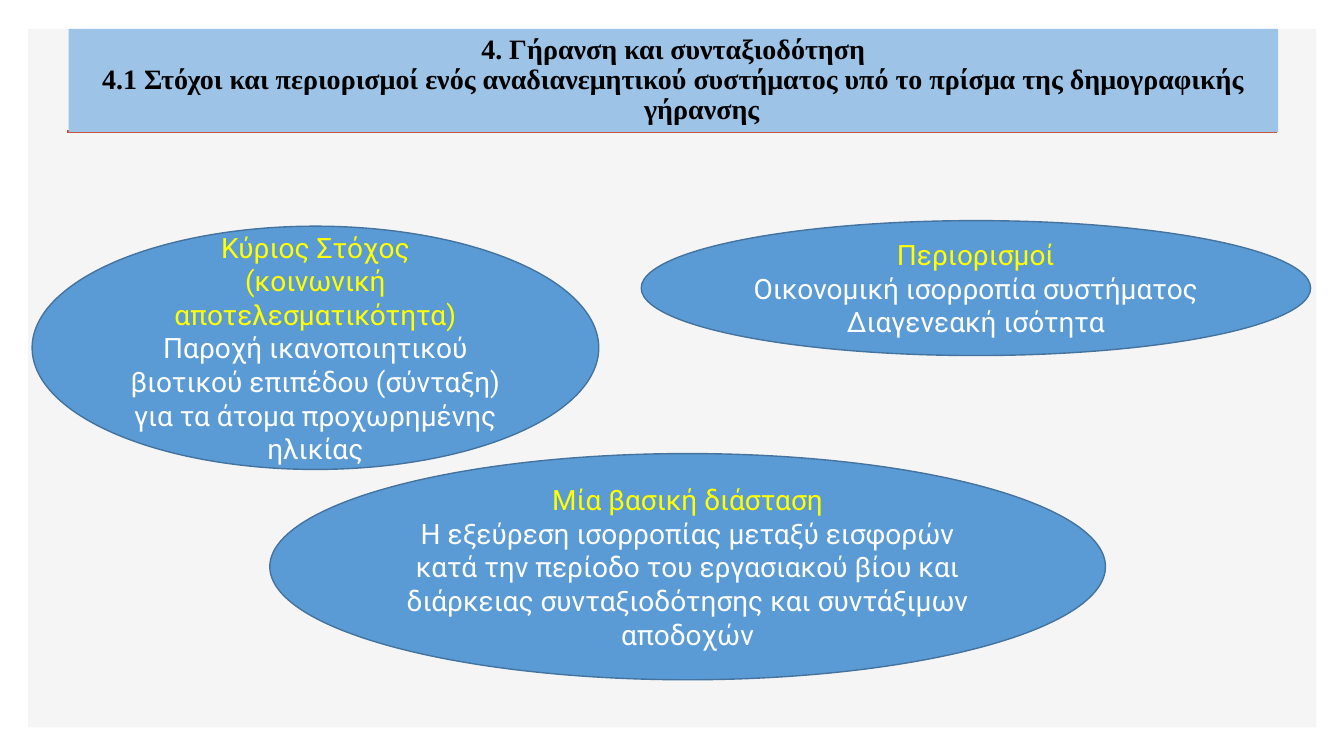
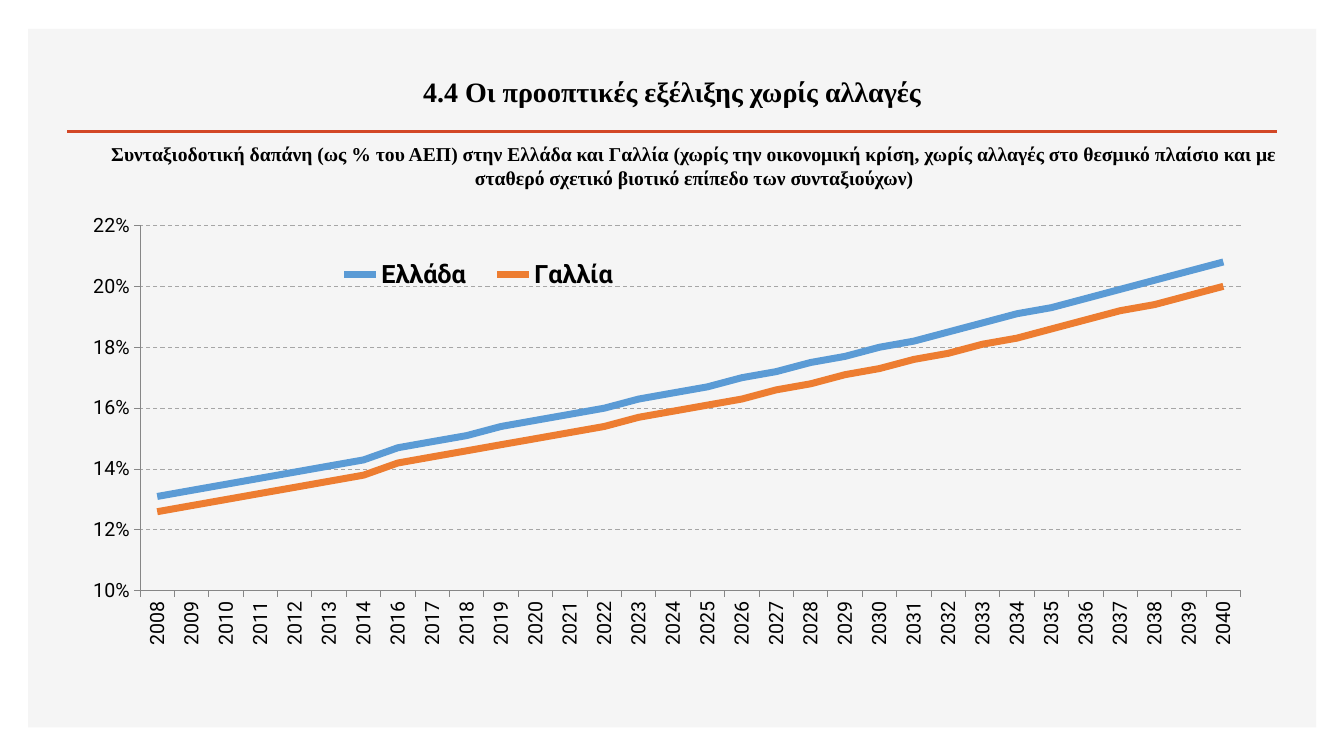
from dataclasses import dataclass

import pptx
import pptx.chart.data
import pptx.dml.color
import pptx.enum.chart
import pptx.enum.dml
import pptx.enum.shapes
import pptx.enum.text
import pptx.oxml
import pptx.oxml.ns
import pptx.util
from pptx.util import Cm

Color = pptx.dml.color.RGBColor.from_string
Point = pptx.util.Pt
Anchor = pptx.enum.text.MSO_ANCHOR
Preset = pptx.enum.shapes.MSO_SHAPE


@dataclass(frozen=True)
class Theme:
    panel = Color("F5F5F5")
    rule = Color("D24726")
    banner = Color("9DC3E6")
    ellipse = Color("5B9BD5")
    ellipse_line = Color("43739E")
    heading = Color("FFFF00")
    light = Color("FFFFFF")
    dark = Color("000000")
    grid = Color("A6A6A6")
    axis = Color("868686")
    greece = Color("5B9BD5")
    france = Color("ED7D31")
    title_font = "Times New Roman"
    body_font = "Roboto"
    title_size = Point(20)
    body_size = Point(20)
    caption_size = Point(14)
    axis_size = Point(14)
    legend_size = Point(18)


theme = Theme()


def add_box(slide, preset, bounds, fill, line=None):
    """Add a flat shape, or a text box when preset is None."""
    if preset is None:
        return slide.shapes.add_textbox(*map(Cm, bounds))
    shape = slide.shapes.add_shape(preset, *map(Cm, bounds))
    shape.shadow.inherit = False
    shape.fill.solid()
    shape.fill.fore_color.rgb = fill
    if line is None:
        shape.line.fill.background()
    else:
        shape.line.color.rgb = line
        shape.line.width = Point(1)
    return shape


def write_lines(shape, lines, font_name, size, anchor, bold=False):
    """Write centred paragraphs, each given as (text, colour)."""
    frame = shape.text_frame
    frame.word_wrap = True
    frame.vertical_anchor = anchor
    for index, (text, color) in enumerate(lines):
        paragraph = frame.add_paragraph() if index else frame.paragraphs[0]
        paragraph.text = text
        paragraph.alignment = pptx.enum.text.PP_ALIGN.CENTER
        paragraph.font.name = font_name
        paragraph.font.size = size
        paragraph.font.bold = bold
        paragraph.font.color.rgb = color


presentation = pptx.Presentation()
presentation.slide_width = Cm(33.87)
presentation.slide_height = Cm(19.05)

# Shared background panel and title rule
slides = []
for _ in range(2):
    slide = presentation.slides.add_slide(presentation.slide_layouts[6])
    add_box(slide, Preset.RECTANGLE, (0.71, 0.73, 32.46, 17.6), theme.panel)
    rule = slide.shapes.add_connector(
        pptx.enum.shapes.MSO_CONNECTOR.STRAIGHT, Cm(1.69), Cm(3.32), Cm(32.18), Cm(3.32))
    rule.line.color.rgb = theme.rule
    rule.line.width = Point(2)
    rule._element.spPr.append(pptx.oxml.parse_xml(
        f"<a:effectLst {pptx.oxml.ns.nsdecls('a')}/>"))
    slides.append(slide)
goals_slide, outlook_slide = slides

# Slide 1: goal, key dimension and constraints
ellipses = [
    ((0.81, 5.7, 14.28, 6.13), [
        ("Κύριος Στόχος", theme.heading),
        ("(κοινωνική αποτελεσματικότητα)", theme.heading),
        ("Παροχή ικανοποιητικού βιοτικού επιπέδου (σύνταξη) για τα άτομα "
         "προχωρημένης ηλικίας", theme.light)]),
    ((6.8, 11.43, 21.06, 5.7), [
        ("Μία βασική διάσταση", theme.heading),
        ("Η εξεύρεση ισορροπίας μεταξύ εισφορών κατά την περίοδο του εργασιακού βίου "
         "και διάρκειας συνταξιοδότησης και συντάξιμων αποδοχών", theme.light)]),
    ((16.16, 5.56, 16.87, 3.4), [
        ("Περιορισμοί", theme.heading),
        ("Οικονομική ισορροπία συστήματος", theme.light),
        ("Διαγενεακή ισότητα", theme.light)]),
]
for bounds, lines in ellipses:
    ellipse = add_box(goals_slide, Preset.OVAL, bounds, theme.ellipse, theme.ellipse_line)
    write_lines(ellipse, lines, theme.body_font, theme.body_size, Anchor.MIDDLE)

banner = add_box(goals_slide, Preset.RECTANGLE, (1.73, 0.73, 30.48, 2.6), theme.banner)
write_lines(banner, [
    ("4. Γήρανση και συνταξιοδότηση", theme.dark),
    ("4.1 Στόχοι και περιορισμοί ενός αναδιανεμητικού συστήματος υπό το πρίσμα της "
     "δημογραφικής γήρανσης", theme.dark),
], theme.title_font, theme.title_size, Anchor.MIDDLE, bold=True)
for paragraph in banner.text_frame.paragraphs:
    paragraph.line_spacing = 0.9
    properties = paragraph._p.get_or_add_pPr()
    properties.set("marL", str(Cm(1.43)))
    properties.set("indent", str(-Cm(1.43)))

# Slide 2: pension spending outlook
title = add_box(outlook_slide, None, (1.7, 0.76, 30.48, 2.08), None)
write_lines(title, [("4.4 Οι προοπτικές εξέλιξης χωρίς αλλαγές", theme.dark)],
            theme.title_font, theme.title_size, Anchor.BOTTOM, bold=True)

chart_data = pptx.chart.data.CategoryChartData(number_format="0%")
chart_data.categories = [str(year) for year in range(2008, 2041) if year != 2015]
chart_data.add_series("Ελλάδα", [
    0.131, 0.133, 0.135, 0.137, 0.139, 0.141, 0.143, 0.147, 0.149, 0.151, 0.154,
    0.156, 0.158, 0.16, 0.163, 0.165, 0.167, 0.17, 0.172, 0.175, 0.177, 0.18,
    0.182, 0.185, 0.188, 0.191, 0.193, 0.196, 0.199, 0.202, 0.205, 0.208])
chart_data.add_series("Γαλλία", [
    0.126, 0.128, 0.13, 0.132, 0.134, 0.136, 0.138, 0.142, 0.144, 0.146, 0.148,
    0.15, 0.152, 0.154, 0.157, 0.159, 0.161, 0.163, 0.166, 0.168, 0.171, 0.173,
    0.176, 0.178, 0.181, 0.183, 0.186, 0.189, 0.192, 0.194, 0.197, 0.2])
chart = outlook_slide.shapes.add_chart(
    pptx.enum.chart.XL_CHART_TYPE.LINE,
    Cm(1.7), Cm(5.21), Cm(30.48), Cm(11.81), chart_data).chart
chart.has_title = False
chart.font.name = theme.body_font
chart.font.size = theme.legend_size
chart.font.color.rgb = theme.dark

plot = chart.plots[0]
plot.vary_by_categories = False
for series, color in zip(plot.series, (theme.greece, theme.france)):
    series.smooth = False
    series.format.line.color.rgb = color
    series.format.line.width = Point(5)

for axis in (chart.category_axis, chart.value_axis):
    axis.major_tick_mark = pptx.enum.chart.XL_TICK_MARK.OUTSIDE
    axis.minor_tick_mark = pptx.enum.chart.XL_TICK_MARK.NONE
    axis.tick_labels.font.size = theme.axis_size
    axis.format.line.color.rgb = theme.axis
    axis.format.line.width = Point(0.75)
chart.category_axis.tick_label_position = pptx.enum.chart.XL_TICK_LABEL_POSITION.LOW
label_body = chart.element.xpath("//c:catAx/c:txPr/a:bodyPr")[0]
label_body.set("rot", "-5400000")
label_body.set("vert", "horz")

value_axis = chart.value_axis
value_axis.minimum_scale = 0.1
value_axis.maximum_scale = 0.22
value_axis.major_unit = 0.02
value_axis.tick_labels.number_format = "0%"
value_axis.tick_labels.number_format_is_linked = False
gridline = value_axis.major_gridlines.format.line
gridline.color.rgb = theme.grid
gridline.width = Point(0.75)
gridline.dash_style = pptx.enum.dml.MSO_LINE.DASH

chart.has_legend = True
chart.legend.position = pptx.enum.chart.XL_LEGEND_POSITION.TOP
chart.legend.include_in_layout = False
chart.legend.font.size = theme.legend_size
chart.legend.font.bold = True

# Fixed places of plot area and legend, as fractions of the chart
for tag, index, target, fractions in (
        ("plotArea", 0, '<c:layoutTarget val="inner"/>', (0.06, 0.04, 0.91, 0.78)),
        ("legend", 1, "", (0.21, 0.1, 0.26, 0.09))):
    parent = chart.element.xpath(f"//c:{tag}")[0]
    for layout in parent.xpath("c:layout"):
        parent.remove(layout)
    modes = '<c:xMode val="edge"/><c:yMode val="edge"/>'
    sizes = "".join(f'<c:{name} val="{value}"/>' for name, value in zip("xywh", fractions))
    parent.insert(index, pptx.oxml.parse_xml(
        f"<c:layout {pptx.oxml.ns.nsdecls('c')}><c:manualLayout>"
        f"{target}{modes}{sizes}</c:manualLayout></c:layout>"))

caption = add_box(outlook_slide, None, (2.26, 3.43, 30.48, 1.47), None)
write_lines(caption, [
    ("Συνταξιοδοτική δαπάνη (ως % του ΑΕΠ) στην Ελλάδα και Γαλλία (χωρίς την οικονομική "
     "κρίση, χωρίς αλλαγές στο θεσμικό πλαίσιο και με σταθερό σχετικό βιοτικό επίπεδο "
     "των συνταξιούχων)", theme.dark),
], theme.title_font, theme.caption_size, Anchor.BOTTOM, bold=True)

presentation.save("out.pptx")
